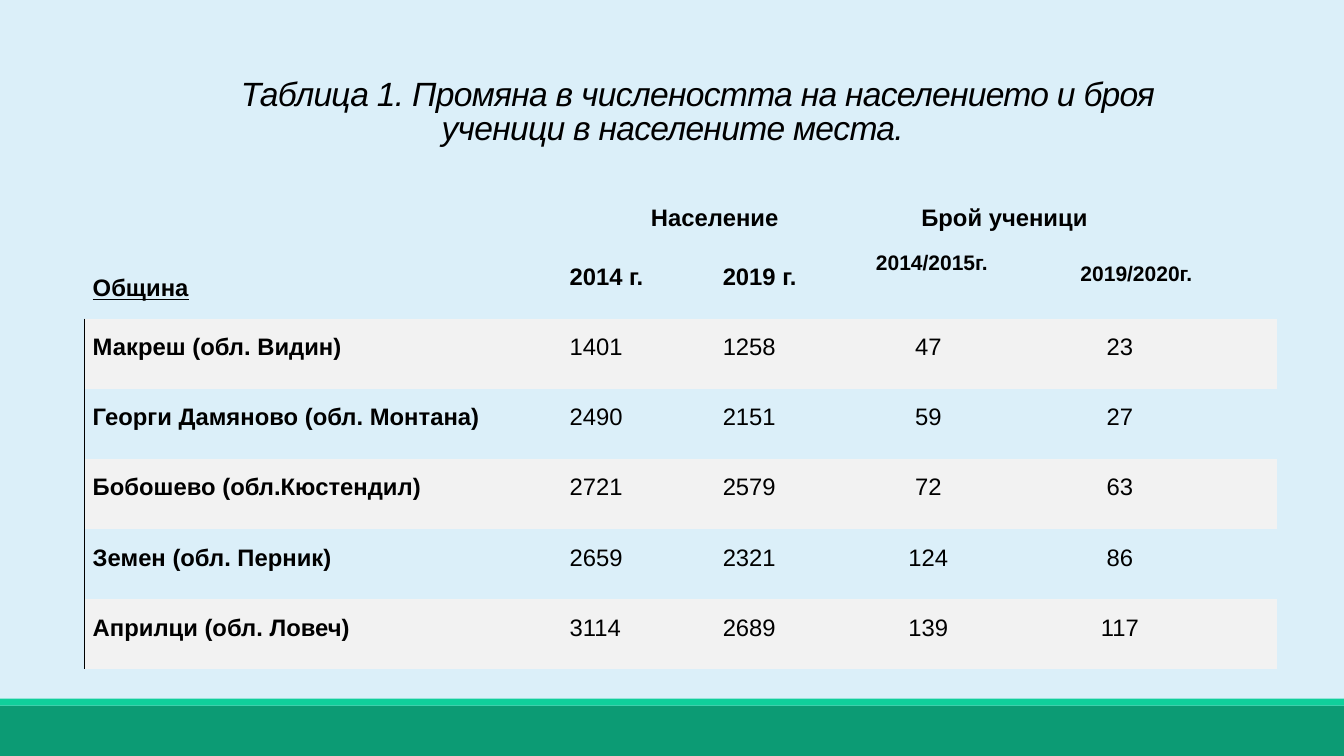
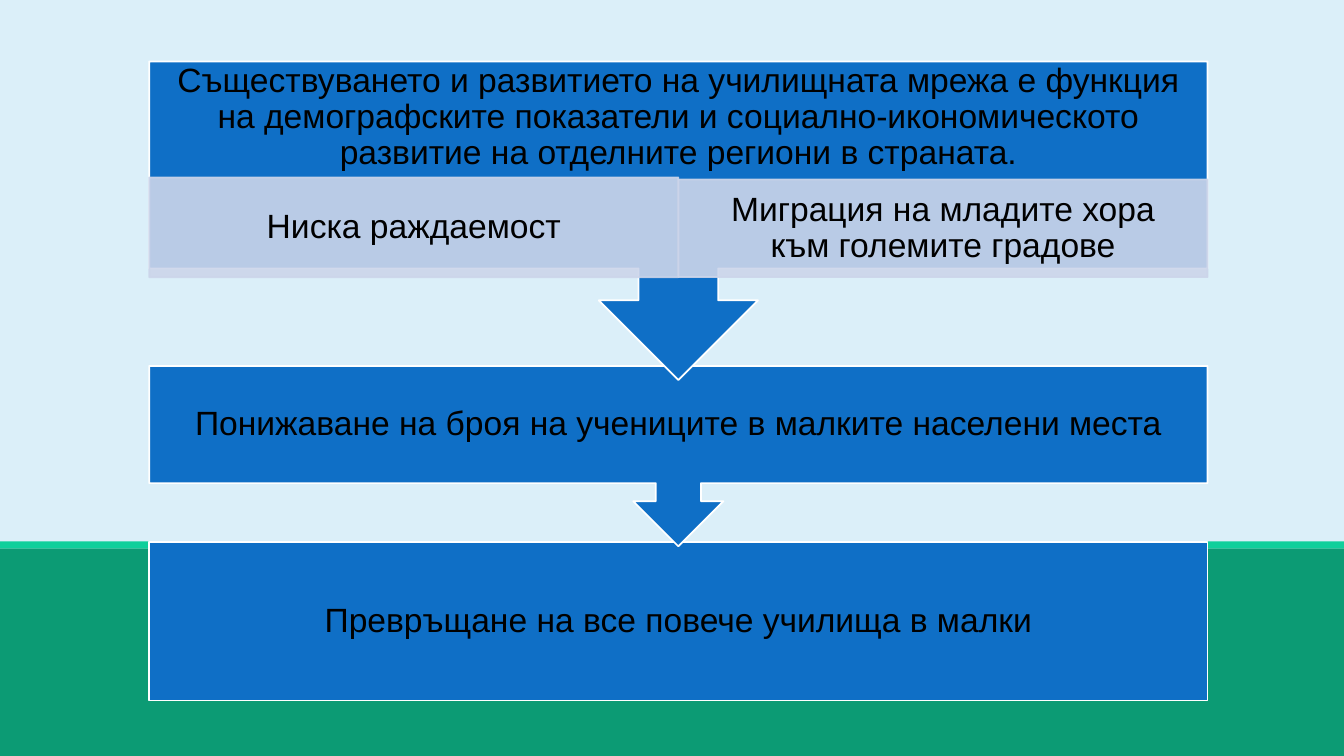
from dataclasses import dataclass

from lxml import etree
from pptx import Presentation
from pptx.dml.color import RGBColor
from pptx.enum.shapes import MSO_SHAPE
from pptx.enum.text import MSO_ANCHOR, PP_ALIGN
from pptx.oxml.ns import qn
from pptx.util import Emu, Inches, Pt

RECT, CALLOUT = MSO_SHAPE.RECTANGLE, MSO_SHAPE.DOWN_ARROW_CALLOUT
LEFT, MID = PP_ALIGN.LEFT, PP_ALIGN.CENTER
TOP, CENTRE, BASE = MSO_ANCHOR.TOP, MSO_ANCHOR.MIDDLE, MSO_ANCHOR.BOTTOM

WIDE, TALL = Inches(13.333), Inches(7.5)
FONT = "Arial"
HUES = {"sky": "DBEFF9", "green": "0C9B74", "mint": "10CF9B", "blue": "0F6FC6",
        "lilac": "CCD5EA", "grey": "F2F2F2", "white": "FFFFFF", "black": "000000"}


@dataclass
class Area:
    """A box in percent of the slide's width and height."""
    x: float
    y: float
    w: float
    h: float

    def emu(self) -> tuple:
        return across(self.x), down(self.y), across(self.w), down(self.h)


@dataclass
class Block:
    """One step or cause in the flow; pads are in inches: left, top, right, bottom."""
    text: str
    area: Area
    form: int = RECT
    hue: str = "blue"
    edge: str = "white"
    alpha: int = 100
    pads: tuple = (0.19, 0.03, 0.19, 0.03)


@dataclass
class Head:
    """A header cell with its place and span in the table."""
    text: str
    row: int
    col: int
    rows: int = 1
    cols: int = 1
    size: float = 17
    lead: float = 1.5
    align: int = LEFT
    anchor: int = TOP
    inset: float = 0.08
    under: bool = False


def across(share: float) -> Emu:
    return Emu(round(WIDE * share / 100))


def down(share: float) -> Emu:
    return Emu(round(TALL * share / 100))


def paint(fill, hue: str, alpha: int = 100) -> None:
    fill.solid()
    fill.fore_color.rgb = RGBColor.from_string(HUES[hue])
    if alpha < 100:
        for tone in fill._xPr.iter(qn("a:srgbClr")):
            etree.SubElement(tone, qn("a:alpha"), val=str(alpha * 1000))


def write(host, text: str, *, size: float = 24, bold: bool = False,
          italic: bool = False, under: bool = False, align: int = MID,
          anchor: int = CENTRE, lead: float = 0.9, after: float = 0,
          pads: tuple = (0.1, 0, 0.1, 0), indent: float = 0, track: float = 0) -> None:
    """Put one paragraph into a text frame or a table cell."""
    for side, pad in zip(("left", "top", "right", "bottom"), pads):
        setattr(host, f"margin_{side}", Inches(pad))
    host.vertical_anchor = anchor
    frame = getattr(host, "text_frame", host)
    frame.word_wrap = True
    para = frame.paragraphs[0]
    para.alignment, para.line_spacing, para.space_after = align, lead, Pt(after)
    run = para.add_run()
    run.text = text
    font = run.font
    font.name, font.size = FONT, Pt(size)
    font.bold, font.italic, font.underline = bold, italic, under
    font.color.rgb = RGBColor.from_string(HUES["black"])
    if indent:
        para._p.get_or_add_pPr().set("indent", str(Inches(indent)))
    if track:
        run._r.get_or_add_rPr().set("spc", str(round(track * 100)))


def shape(slide, area: Area, hue: str, form: int = RECT, edge: str = "", alpha: int = 100):
    item = slide.shapes.add_shape(form, *area.emu())
    item.shadow.inherit = False
    paint(item.fill, hue, alpha)
    if edge:
        paint(item.line.fill, edge, alpha)
        item.line.width = Pt(1.25)
    else:
        item.line.fill.background()
    return item


def start(deck, top: float):
    """Add a blank slide with the sky and the ground band from a given height."""
    slide = deck.slides.add_slide(deck.slide_layouts[6])
    paint(slide.background.fill, "sky")
    thin = 0.93
    shape(slide, Area(0, top + thin, 100, 100 - top - thin), "green")
    shape(slide, Area(0, top, 100, thin), "mint")
    return slide


def border(cell, left: bool) -> None:
    """Clear the cell's edges, with an optional thin left rule."""
    props = cell._tc.get_or_add_tcPr()
    for spot, side in enumerate("LRTB"):
        line = etree.Element(qn(f"a:ln{side}"), w=str(Pt(0.75)))
        if left and side == "L":
            solid = etree.SubElement(line, qn("a:solidFill"))
            etree.SubElement(solid, qn("a:srgbClr"), val=HUES["black"])
        else:
            etree.SubElement(line, qn("a:noFill"))
        props.insert(spot, line)


# Table content
COLS = (35.48, 11.4, 11.4, 15.22, 15.22)
HEADS = (
    Head("Община", 0, 0, rows=2, anchor=BASE, under=True),
    Head("Население", 0, 1, cols=2, align=MID, anchor=BASE),
    Head("Брой ученици", 0, 3, cols=2, anchor=BASE, inset=0.53),
    Head("2014 г.", 1, 1),
    Head("2019 г.", 1, 2),
    Head("2014/2015г.", 1, 3, size=15, lead=1.06),
    Head("2019/2020г.", 1, 4, size=15),
)
TOWNS = (
    ("Макреш (обл. Видин)", 1401, 1258, 47, 23),
    ("Георги Дамяново (обл. Монтана)", 2490, 2151, 59, 27),
    ("Бобошево (обл.Кюстендил)", 2721, 2579, 72, 63),
    ("Земен (обл. Перник)", 2659, 2321, 124, 86),
    ("Априлци (обл. Ловеч)", 3114, 2689, 139, 117),
)
# Right insets that centre the pupil counts under their headings
RIGHT = {3: 0.91, 4: 1.17}


def census(slide) -> None:
    count, step = len(TOWNS) + 2, 9.28
    area = Area(6.3, 23.6, sum(COLS), step * count)
    grid = slide.shapes.add_table(count, len(COLS), *area.emu()).table
    grid.first_row = grid.horz_banding = False
    for col, share in zip(grid.columns, COLS):
        col.width = across(share)
    for row in grid.rows:
        row.height = down(step)

    # Bands and rules
    for r in range(count):
        for c in range(len(COLS)):
            cell = grid.cell(r, c)
            if r > 1 and r % 2 == 0:
                paint(cell.fill, "grey")
            else:
                cell.fill.background()
            border(cell, left=r > 1 and c == 0)

    # Header cells
    for head in HEADS:
        cell = grid.cell(head.row, head.col)
        if head.rows * head.cols > 1:
            cell.merge(grid.cell(head.row + head.rows - 1, head.col + head.cols - 1))
        write(cell, head.text, size=head.size, bold=True, under=head.under,
              align=head.align, anchor=head.anchor, lead=head.lead, after=8,
              pads=(head.inset, 0.02, 0.08, 0.17))

    # Town rows
    for r, town in enumerate(TOWNS, 2):
        for c, value in enumerate(town):
            write(grid.cell(r, c), str(value), size=17, bold=c == 0,
                  align=MID if c in RIGHT else LEFT, anchor=TOP, lead=1.5, after=8,
                  pads=(0.08, 0.02, RIGHT.get(c, 0.08), 0.17))


# Flow content, from back to front
EDGE, SPAN = 11.1, 78.75
HALF = SPAN / 2
SOFT = {"hue": "lilac", "edge": "lilac", "alpha": 90}
FLOW = (
    Block("Превръщане на все повече училища в малки", Area(EDGE, 71.73, SPAN, 20.93)),
    Block("Понижаване на броя на учениците в малките населени места",
          Area(EDGE, 48.4, SPAN, 23.87), CALLOUT),
    Block("Съществуването и развитието на училищната мрежа е функция на "
          "демографските показатели и социално-икономическото развитие на "
          "отделните региони в страната.",
          Area(EDGE, 8.13, SPAN, 42.13), CALLOUT, pads=(0.19, 0.03, 0.19, 0.97)),
    Block("Ниска раждаемост", Area(EDGE, 23.47, HALF, 13.2), **SOFT),
    Block("Миграция на младите хора към големите градове",
          Area(EDGE + HALF, 23.73, HALF, 12.93), **SOFT),
)


def main() -> None:
    deck = Presentation()
    deck.slide_width, deck.slide_height = WIDE, TALL

    # Slide 1: title and table
    slide = start(deck, 92.4)
    title = slide.shapes.add_textbox(*Area(8.8, 10.27, 82.5, 9.33).emu())
    write(title.text_frame,
          "Таблица 1. Промяна в числеността на населението и броя ученици "
          "в населените мeста.",
          italic=True, lead=0.85, indent=0.49, track=-0.5)
    census(slide)

    # Slide 2: causes and effects
    slide = start(deck, 71.6)
    for block in FLOW:
        item = shape(slide, block.area, block.hue, block.form, block.edge, block.alpha)
        write(item.text_frame, block.text, pads=block.pads)

    deck.save("out.pptx")


if __name__ == "__main__":
    main()
